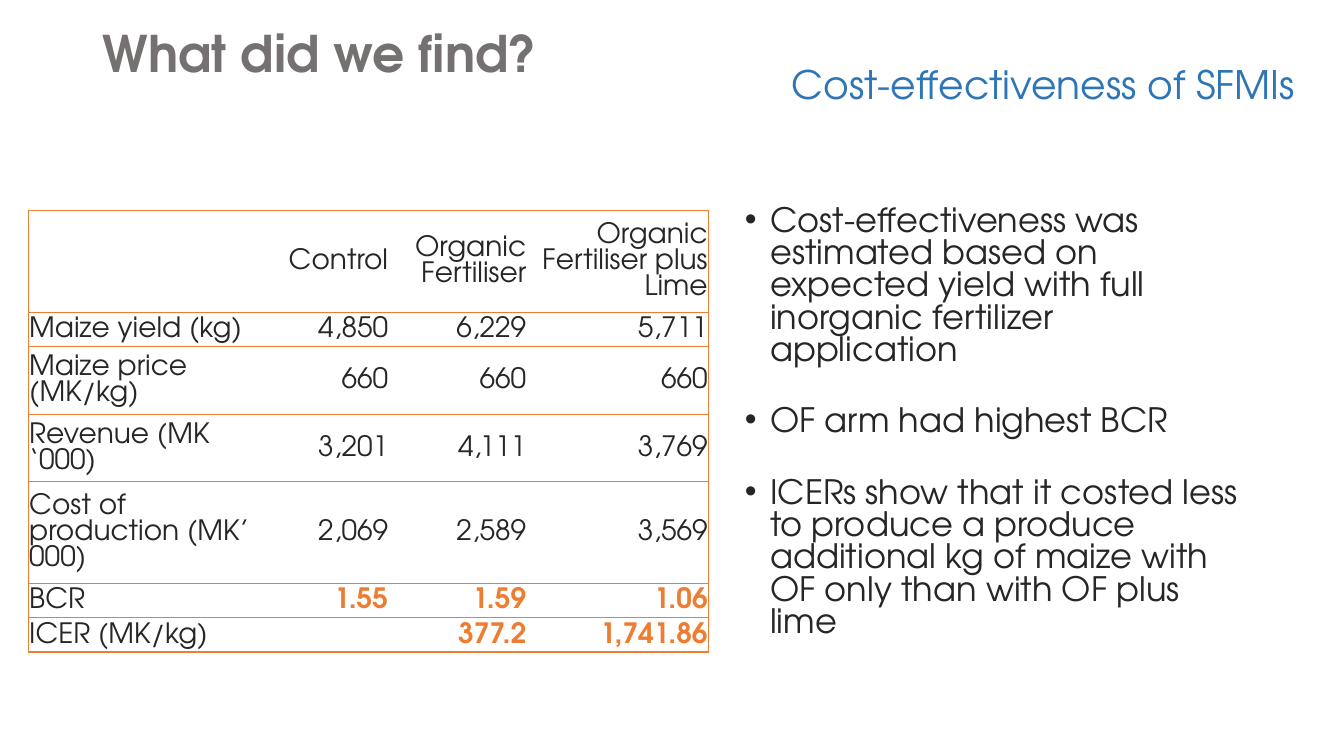
from lxml import etree
from pptx import Presentation
from pptx.dml.color import RGBColor
from pptx.enum import text
from pptx.oxml import ns
from pptx.util import Inches, Pt

FONT = "TeX Gyre Adventor"
GREY = RGBColor(0x76, 0x71, 0x71)
INK = RGBColor(0x26, 0x26, 0x26)
ORANGE = RGBColor(0xED, 0x7D, 0x31)
BLUE = RGBColor(0x2E, 0x75, 0xB6)
WHITE = RGBColor(0xFF, 0xFF, 0xFF)
LEFT, RIGHT = text.PP_ALIGN.LEFT, text.PP_ALIGN.RIGHT

RESULTS = [
    ["", "Control", "Organic Fertiliser", "Organic Fertiliser plus Lime"],
    ["Maize yield (kg)", "4,850", "6,229", "5,711"],
    ["Maize price (MK/kg)", "660", "660", "660"],
    ["Revenue (MK ‘000)", "3,201", "4,111", "3,769"],
    ["Cost of production (MK’ 000)", "2,069", "2,589", "3,569"],
    ["BCR", "1.55", "1.59", "1.06"],
    ["ICER (MK/kg)", "", "377.2", "1,741.86"],
]
RATIO_ROWS = (5, 6)
COLUMN_WIDTHS = [2.51, 1.07, 1.37, 1.8]
ROW_HEIGHTS = [1.01, 0.34, 0.67, 0.67, 1.01, 0.34, 0.34]

FINDINGS = [
    "Cost-effectiveness was estimated based on expected yield with full inorganic fertilizer application",
    "OF arm had highest BCR",
    "ICERs show that it costed less to produce a produce additional kg of maize with OF only than with OF plus lime",
]


class SlideBuilder:
    def __init__(self, deck):
        self.slide = deck.slides.add_slide(deck.slide_layouts[5])

    def format_paragraph(self, paragraph, size, color, bold=False, align=LEFT, spacing=1.0):
        paragraph.alignment = align
        paragraph.line_spacing = spacing
        for run in paragraph.runs:
            run.font.name = FONT
            run.font.size = Pt(size)
            run.font.bold = bold
            run.font.color.rgb = color

    def title(self, words, box):
        heading = self.slide.shapes.title
        heading.left, heading.top, heading.width, heading.height = map(Inches, box)
        frame = heading.text_frame
        frame.text = words
        frame.vertical_anchor = text.MSO_ANCHOR.MIDDLE
        self.format_paragraph(frame.paragraphs[0], 36, GREY, bold=True, spacing=0.9)

    def text_frame(self, box):
        frame = self.slide.shapes.add_textbox(*map(Inches, box)).text_frame
        frame.word_wrap = True
        return frame

    def subtitle(self, words, box):
        frame = self.text_frame(box)
        frame.text = words
        self.format_paragraph(frame.paragraphs[0], 28, BLUE, align=RIGHT)

    def bullets(self, items, box):
        frame = self.text_frame(box)
        for index, item in enumerate(items):
            paragraph = frame.paragraphs[0] if index == 0 else frame.add_paragraph()
            paragraph.text = item
            self.format_paragraph(paragraph, 24, INK, spacing=0.8)
            paragraph.space_before = Pt(10 if index else 0)
            paragraph.space_after = Pt(18)
            properties = paragraph._p.get_or_add_pPr()
            properties.set("marL", str(Inches(0.25)))
            properties.set("indent", str(Inches(-0.25)))
            etree.SubElement(properties, ns.qn("a:buFont")).set("typeface", "Arial")
            etree.SubElement(properties, ns.qn("a:buChar")).set("char", "•")

    def borders(self, cell, visible):
        """Draw the visible sides (from L, R, T, B) and hide the others."""
        properties = cell._tc.get_or_add_tcPr()
        for index, side in enumerate("LRTB"):
            line = etree.Element(ns.qn(f"a:ln{side}"), w=str(Pt(1)))
            if side in visible:
                fill = etree.SubElement(line, ns.qn("a:solidFill"))
                etree.SubElement(fill, ns.qn("a:srgbClr")).set("val", str(ORANGE))
            else:
                etree.SubElement(line, ns.qn("a:noFill"))
            properties.insert(index, line)

    def table(self, rows, widths, heights, left, top):
        grid = self.slide.shapes.add_table(
            len(rows), len(widths), Inches(left), Inches(top),
            Inches(sum(widths)), Inches(sum(heights))).table
        grid.first_row = grid.horz_banding = False
        for column, width in zip(grid.columns, widths):
            column.width = Inches(width)
        for r, (values, height) in enumerate(zip(rows, heights)):
            grid.rows[r].height = Inches(height)
            for c, value in enumerate(values):
                cell = grid.cell(r, c)
                cell.text = value
                cell.vertical_anchor = text.MSO_ANCHOR.MIDDLE
                cell.margin_left = cell.margin_right = cell.margin_top = Inches(0.01)
                cell.margin_bottom = 0
                cell.fill.solid()
                cell.fill.fore_color.rgb = WHITE
                ratio = r in RATIO_ROWS and c > 0
                self.format_paragraph(
                    cell.text_frame.paragraphs[0], 20, ORANGE if ratio else INK,
                    bold=ratio, align=RIGHT if c else LEFT)
                self.borders(cell, "TB" + {0: "L", len(widths) - 1: "R"}.get(c, ""))


def main():
    deck = Presentation()
    deck.slide_width, deck.slide_height = Inches(13.33), Inches(7.5)
    builder = SlideBuilder(deck)
    builder.title("What did we find?", (0.92, 0.23, 11.5, 0.65))
    builder.table(RESULTS, COLUMN_WIDTHS, ROW_HEIGHTS, 0.28, 2.09)
    builder.bullets(FINDINGS, (7.29, 2, 5.12, 4.76))
    builder.subtitle("Cost-effectiveness of SFMIs", (0.56, 0.55, 12.38, 0.57))
    deck.save("out.pptx")


if __name__ == "__main__":
    main()
